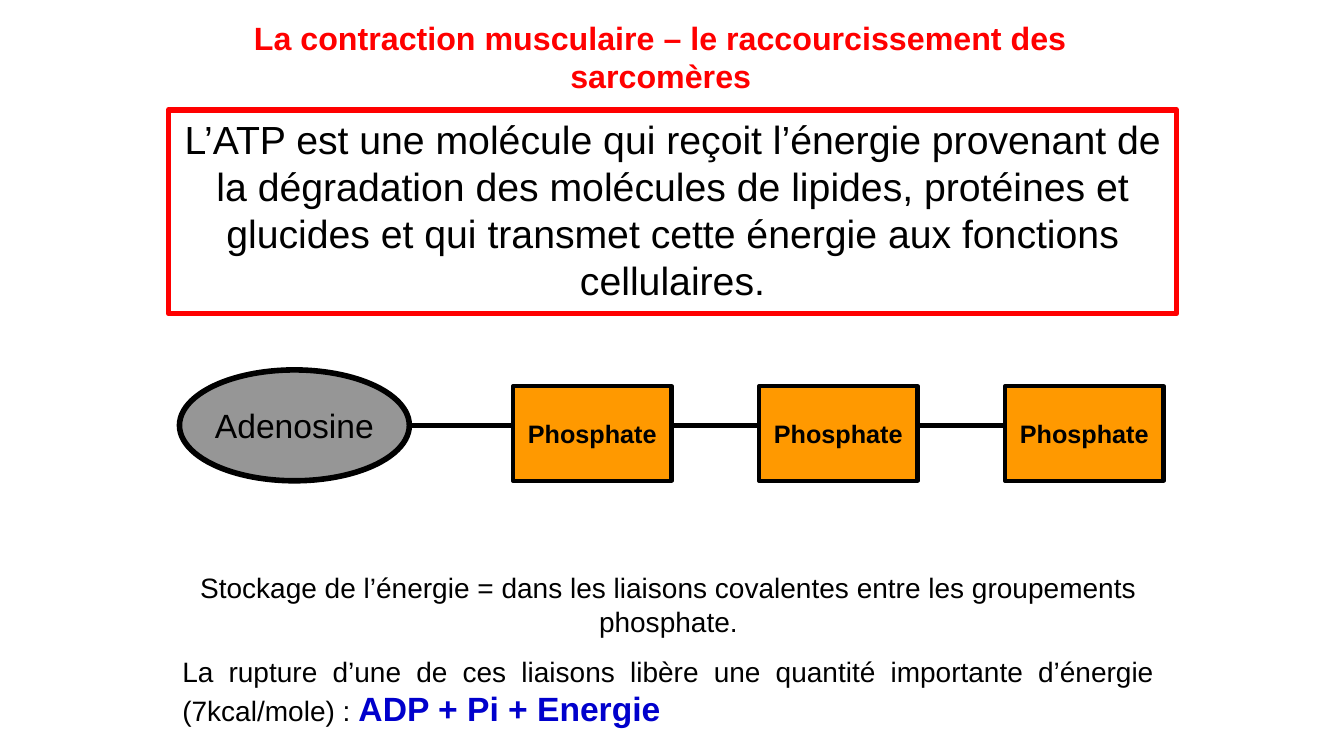
from dataclasses import dataclass

import pptx
import pptx.dml.color
import pptx.enum.shapes
import pptx.enum.text
import pptx.oxml.ns
import pptx.util
from lxml import etree

Inches, Pt = pptx.util.Inches, pptx.util.Pt
Kind = pptx.enum.shapes.MSO_SHAPE
Align = pptx.enum.text.PP_ALIGN
Anchor = pptx.enum.text.MSO_ANCHOR

COLORS = {
    "black": "000000", "white": "FFFFFF", "red": "FF0000",
    "gray": "969696", "orange": "FF9900", "blue": "0000CC",
}


@dataclass
class Run:
    text: str
    size: float
    color: str = "black"
    bold: bool = False


@dataclass
class Para:
    runs: list[Run]
    align: Align = Align.CENTER
    before: float = 0


@dataclass
class Block:
    left: float
    top: float
    width: float
    height: float
    paras: list[Para]


@dataclass
class Node(Block):
    kind: Kind
    fill: str
    line: str
    weight: float
    anchor: Anchor = Anchor.MIDDLE
    wrap: bool = False


def rgb(name: str) -> pptx.dml.color.RGBColor:
    return pptx.dml.color.RGBColor.from_string(COLORS[name])


def style(font, run: Run) -> None:
    font.name = "Arial"
    font.size = Pt(run.size)
    font.bold = run.bold
    font.color.rgb = rgb(run.color)


def write(frame, paras: list[Para], wrap: bool, anchor: Anchor) -> None:
    frame.word_wrap = wrap
    frame.vertical_anchor = anchor
    for i, para in enumerate(paras):
        p = frame.add_paragraph() if i else frame.paragraphs[0]
        p.alignment = para.align
        p.space_before = Pt(para.before)
        if len(para.runs) == 1:
            style(p.font, para.runs[0])
        for run in para.runs:
            r = p.add_run()
            r.text = run.text
            if len(para.runs) > 1:
                style(r.font, run)


def frame_of(block: Block) -> list[int]:
    return [Inches(v) for v in (block.left, block.top, block.width, block.height)]


def draw_text(slide, block: Block) -> None:
    box = slide.shapes.add_textbox(*frame_of(block))
    write(box.text_frame, block.paras, True, Anchor.TOP)


def draw_node(slide, node: Node) -> None:
    shape = slide.shapes.add_shape(node.kind, *frame_of(node))
    shape.shadow.inherit = False
    shape.fill.solid()
    shape.fill.fore_color.rgb = rgb(node.fill)
    shape.line.color.rgb = rgb(node.line)
    shape.line.width = Pt(node.weight)
    write(shape.text_frame, node.paras, node.wrap, node.anchor)


def draw_bond(slide, start: Node, end: Node, y: float) -> None:
    """Join the right edge of one node to the left edge of the next."""
    bond = slide.shapes.add_connector(
        pptx.enum.shapes.MSO_CONNECTOR.STRAIGHT,
        Inches(start.left + start.width), Inches(y), Inches(end.left), Inches(y))
    bond.line.color.rgb = rgb("black")
    bond.line.width = Pt(4)
    etree.SubElement(bond._element.spPr, pptx.oxml.ns.qn("a:effectLst"))


INTRO = Node(1.67, 1.09, 10, 2.02, [Para([Run(
    "L’ATP est une molécule qui reçoit l’énergie provenant de la dégradation "
    "des molécules de lipides, protéines et glucides et qui transmet cette "
    "énergie aux fonctions cellulaires.", 28)])],
    Kind.RECTANGLE, "white", "red", 4, Anchor.TOP, True)

CHAIN = [Node(1.78, 3.67, 2.28, 1.1, [Para([Run("Adenosine", 24)])],
              Kind.OVAL, "gray", "black", 4)]
CHAIN += [Node(5.09 + 2.44 * i, 3.83, 1.57, 0.94,
               [Para([Run("Phosphate", 18, bold=True)])],
               Kind.RECTANGLE, "orange", "black", 3) for i in range(3)]

TEXTS = [
    Block(1.71, 5.61, 9.84, 1.67, [
        Para([Run("Stockage de l’énergie = dans les liaisons covalentes entre "
                  "les groupements phosphate.", 20)]),
        Para([Run("La rupture d’une de ces liaisons libère une quantité "
                  "importante d’énergie (7kcal/mole) : ", 20),
              Run("ADP + Pi + Energie", 24, "blue", True)], Align.JUSTIFY, 12),
    ]),
    Block(1.71, 0.13, 9.69, 0.88, [Para([Run(
        "La contraction musculaire – le raccourcissement des sarcomères",
        23, "red", True)])]),
]


def main() -> None:
    deck = pptx.Presentation()
    deck.slide_width, deck.slide_height = Inches(13.33), Inches(7.5)
    slide = deck.slides.add_slide(deck.slide_layouts[6])
    for node in [INTRO, *CHAIN]:
        draw_node(slide, node)
    for start, end in zip(CHAIN, CHAIN[1:]):
        draw_bond(slide, start, end, 4.22)
    for block in TEXTS:
        draw_text(slide, block)
    deck.save("out.pptx")


if __name__ == "__main__":
    main()
